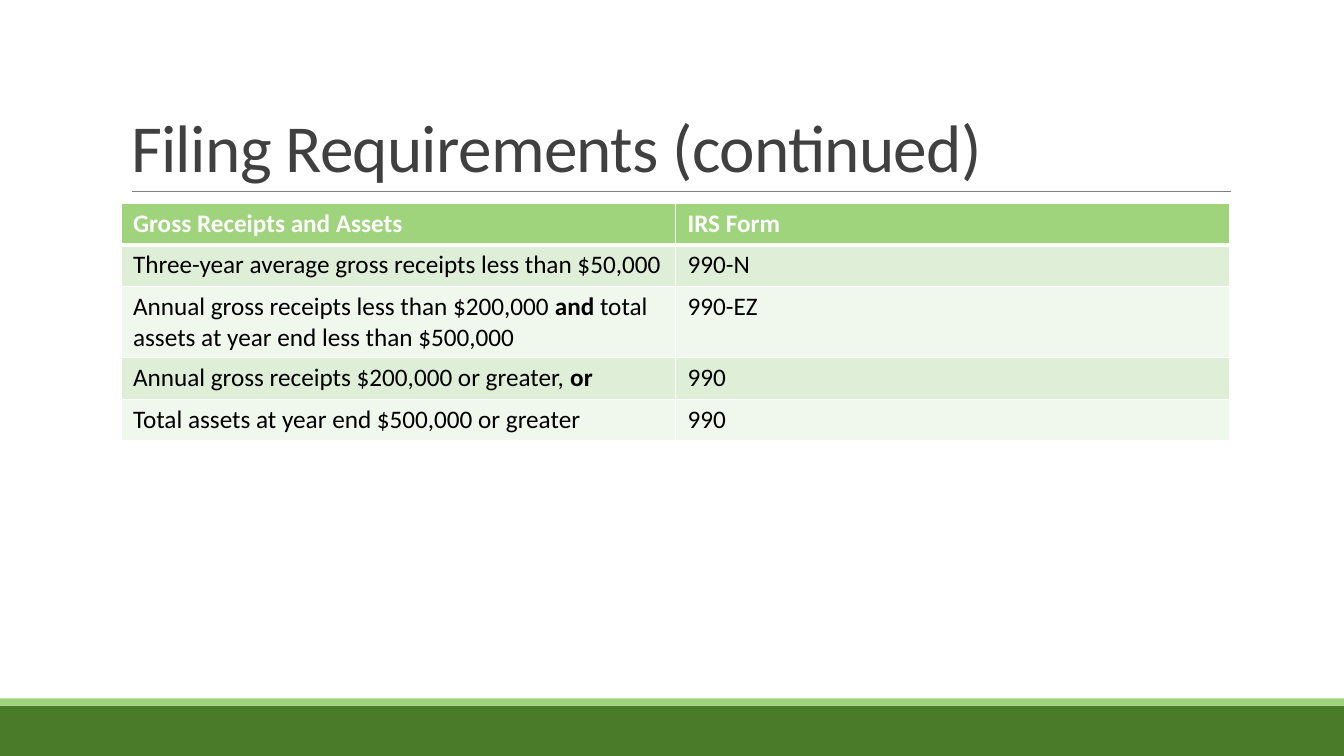
import lxml.etree
import pptx
import pptx.dml.color
import pptx.enum.shapes
import pptx.enum.text
import pptx.oxml.ns
import pptx.util

Inches = pptx.util.Inches
Pt = pptx.util.Pt
qn = pptx.oxml.ns.qn

COLORS = {
    "footer": "4A7B29", "accent": "9FD37C", "rule": "808080", "title": "404040",
    "band": "DFEFD7", "light": "F0F7EC", "white": "FFFFFF", "black": "000000",
}
FILING_ROWS = [
    (["Gross Receipts and Assets"], "IRS Form"),
    (["Three-year average gross receipts less than $50,000"], "990-N"),
    (["Annual gross receipts less than $200,000 ", "and",
      " total assets at year end less than $500,000"], "990-EZ"),
    (["Annual gross receipts $200,000 or greater, ", "or"], "990"),
    (["Total assets at year end $500,000 or greater"], "990"),
]


class SlideBuilder:
    """Holds the slide and its style, and adds each kind of element."""

    font = "Calibri"

    def __init__(self, slide):
        self.slide = slide

    def color(self, name):
        return pptx.dml.color.RGBColor.from_string(COLORS[name])

    def style_run(self, run, size, color, bold=False):
        run.font.name = self.font
        run.font.size = Pt(size)
        run.font.bold = bold
        run.font.color.rgb = self.color(color)

    def title(self, text, left, top, width, height):
        heading = self.slide.shapes.title
        heading.left, heading.top = Inches(left), Inches(top)
        heading.width, heading.height = Inches(width), Inches(height)
        frame = heading.text_frame
        frame.text = text
        frame.word_wrap = True
        frame.auto_size = pptx.enum.text.MSO_AUTO_SIZE.NONE
        frame.vertical_anchor = pptx.enum.text.MSO_ANCHOR.BOTTOM
        paragraph = frame.paragraphs[0]
        paragraph.alignment = pptx.enum.text.PP_ALIGN.LEFT
        paragraph.line_spacing = 0.85
        run = paragraph.runs[0]
        self.style_run(run, 48, "title")
        run.font._element.set("spc", "-50")

    def bar(self, top, height, color):
        band = self.slide.shapes.add_shape(
            pptx.enum.shapes.MSO_SHAPE.RECTANGLE,
            Inches(0), Inches(top), Inches(13.33), Inches(height))
        band.shadow.inherit = False
        band.fill.solid()
        band.fill.fore_color.rgb = self.color(color)
        band.line.fill.background()

    def rule(self, left, right, y):
        divider = self.slide.shapes.add_connector(
            pptx.enum.shapes.MSO_CONNECTOR.STRAIGHT,
            Inches(left), Inches(y), Inches(right), Inches(y))
        divider.line.color.rgb = self.color("rule")
        divider.line.width = Pt(0.5)
        lxml.etree.SubElement(divider._element.spPr, qn("a:effectLst"))

    def borders(self, cell, widths):
        properties = cell._tc.get_or_add_tcPr()
        for position, (side, width) in enumerate(widths.items()):
            edge = lxml.etree.Element(qn(f"a:ln{side}"), w=str(Pt(width)))
            fill = lxml.etree.SubElement(edge, qn("a:solidFill"))
            lxml.etree.SubElement(fill, qn("a:srgbClr"), val=COLORS["white"])
            properties.insert(position, edge)

    def cell(self, cell, pieces, row):
        header = row == 0
        cell.margin_left = cell.margin_right = Inches(0.12)
        cell.margin_top = cell.margin_bottom = Inches(0.05)
        for index, piece in enumerate(pieces):
            run = cell.text_frame.paragraphs[0].add_run()
            run.text = piece
            self.style_run(run, 18, "white" if header else "black",
                           header or index % 2 == 1)
        cell.fill.solid()
        cell.fill.fore_color.rgb = self.color(
            "accent" if header else "band" if row % 2 else "light")
        self.borders(cell, {"L": 1, "R": 1, "T": 3 if row == 1 else 1,
                            "B": 3 if header else 1})

    def table(self, rows, left, top, width, height, row_height):
        frame = self.slide.shapes.add_table(
            len(rows), 2, Inches(left), Inches(top), Inches(width), Inches(height))
        for row, (receipts, form) in enumerate(rows):
            frame.table.rows[row].height = Inches(row_height)
            self.cell(frame.table.cell(row, 0), receipts, row)
            self.cell(frame.table.cell(row, 1), [form], row)
        frame.height = Inches(height)


def main():
    presentation = pptx.Presentation()
    presentation.slide_width = Inches(13.33)
    presentation.slide_height = Inches(7.5)
    builder = SlideBuilder(presentation.slides.add_slide(presentation.slide_layouts[5]))
    builder.bar(7, 0.5, "footer")
    builder.bar(6.93, 0.07, "accent")
    builder.rule(1.31, 12.21, 1.9)
    builder.title("Filing Requirements (continued)", 1.2, 0.31, 11, 1.59)
    builder.table(FILING_ROWS, 1.2, 2.02, 11, 2.32, 0.41)
    presentation.save("out.pptx")


if __name__ == "__main__":
    main()
